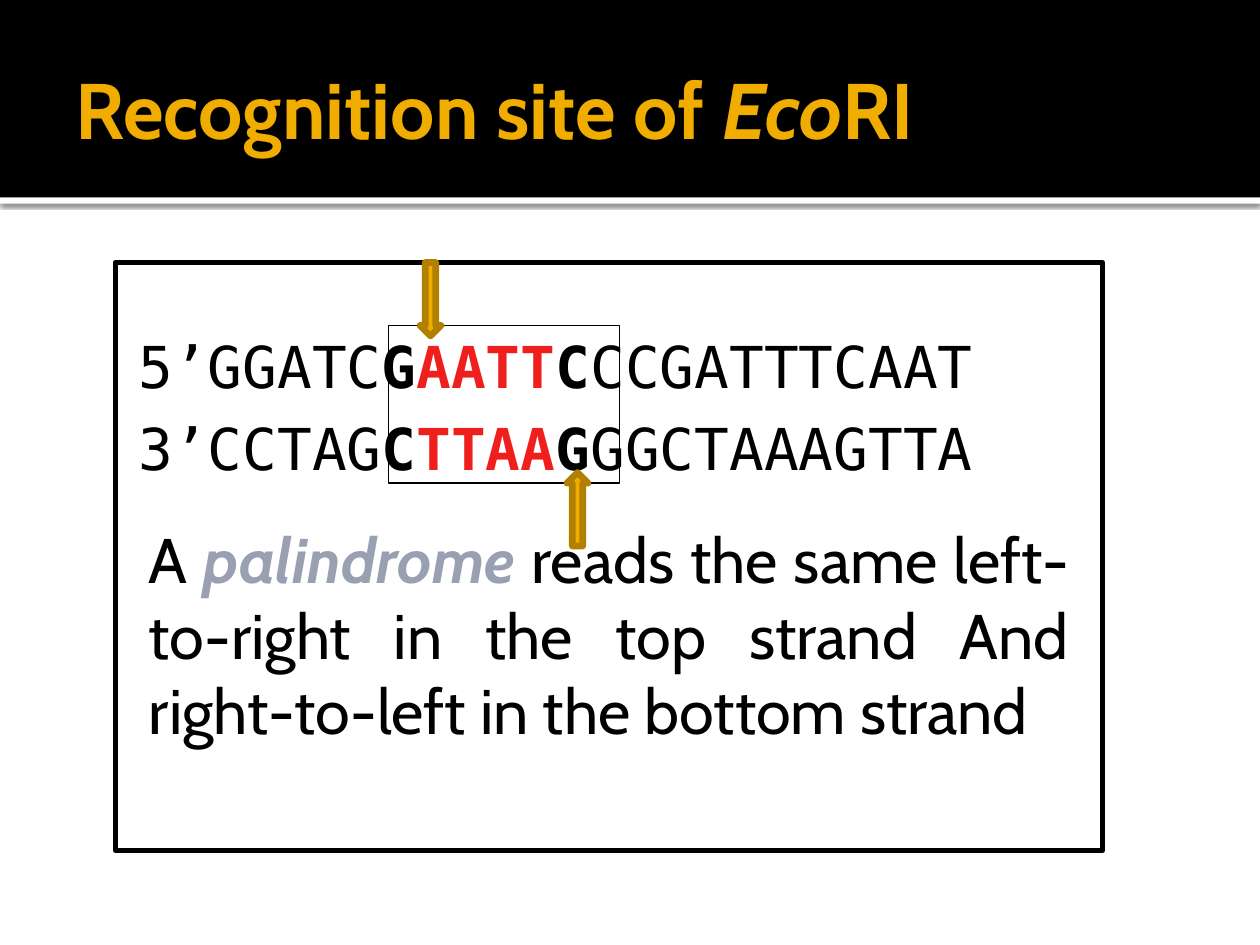
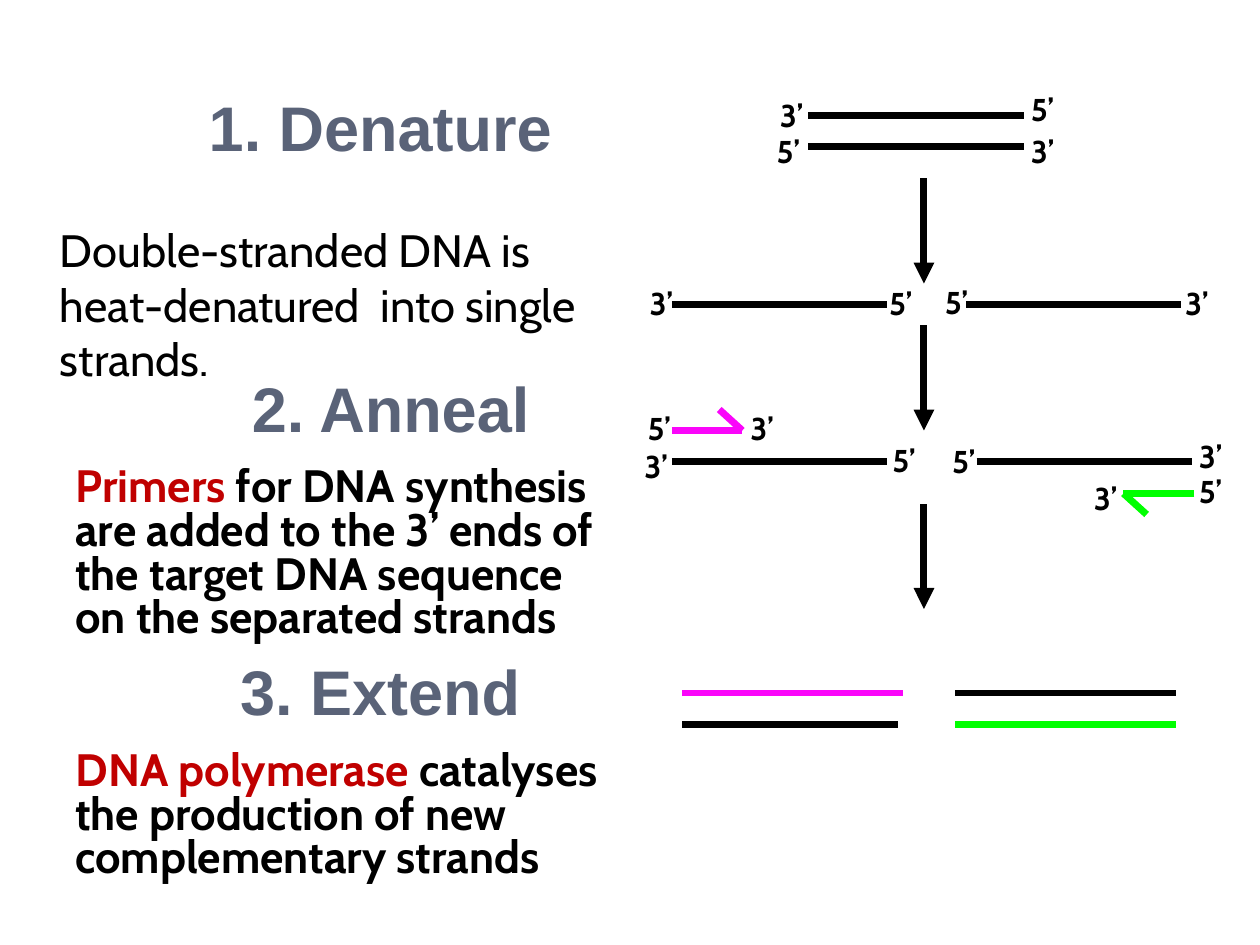
from collections import namedtuple

from lxml import etree
from pptx import Presentation, util as u
from pptx.dml.color import RGBColor
from pptx.enum import shapes, text
from pptx.oxml import ns

# The slide is a grid of 120 columns by 90 rows
COLUMNS, ROWS = 120, 90
CELL = u.Inches(10) // COLUMNS

COLORS = {
    "black": "000000", "white": "FFFFFF", "gold": "F0AD00", "bronze": "B28000",
    "site": "EF1F1D", "term": "98A0B2", "heading": "5A6378", "key": "C00000",
    "magenta": "FA05FA", "green": "00FF00",
}
SANS, MONO, HEADING = "Cabin", "DejaVu Sans Mono", "Arial"
INSETS = (0.1, 0.05, 0.1, 0.05)

Box = namedtuple("Box", "left top width height")


def cells(count):
    return u.Emu(round(count * CELL))


def within(box, left, top, width, height):
    """Turn a place inside a box into a place on the slide."""
    return Box(box.left + left, box.top + top, width, height)


def rgb(color):
    return RGBColor.from_string(COLORS[color])


def add_effects(props, shadow=False):
    effects = etree.SubElement(props, ns.qn("a:effectLst"))
    if shadow:
        outer = etree.SubElement(effects, ns.qn("a:outerShdw"), blurRad=str(u.Pt(2.5)),
                                 dist=str(u.Pt(0.8)), dir="5400000", rotWithShape="0")
        black = etree.SubElement(outer, ns.qn("a:srgbClr"), val=COLORS["black"])
        etree.SubElement(black, ns.qn("a:alpha"), val="60000")


def add_figure(slide, box, fill=None, line=None, weight=1.0, shadow=False,
               kind=shapes.MSO_SHAPE.RECTANGLE):
    figure = slide.shapes.add_shape(kind, *map(cells, box))
    if fill:
        figure.fill.solid()
        figure.fill.fore_color.rgb = rgb(fill)
    else:
        figure.fill.background()
    if line:
        figure.line.color.rgb = rgb(line)
        figure.line.width = u.Pt(weight)
    else:
        figure.line.fill.background()
    if shadow:
        add_effects(figure._element.spPr, shadow=True)
    else:
        figure.shadow.inherit = False
    return figure


def add_words(slide, box, paragraphs, size, font=SANS, insets=INSETS, wrap=True,
              anchor=text.MSO_ANCHOR.TOP, align=text.PP_ALIGN.LEFT, leading=1.0, after=0):
    """Each paragraph is a list of runs: (words, color, style), style from "b" and "i"."""
    frame = slide.shapes.add_textbox(*map(cells, box)).text_frame
    frame.word_wrap = wrap
    frame.vertical_anchor = anchor
    (frame.margin_left, frame.margin_top,
     frame.margin_right, frame.margin_bottom) = map(u.Inches, insets)
    for index, runs in enumerate(paragraphs):
        paragraph = frame.add_paragraph() if index else frame.paragraphs[0]
        paragraph.alignment = align
        paragraph.line_spacing = leading
        paragraph.space_after = u.Pt(after)
        for words, color, style in runs:
            run = paragraph.add_run()
            run.text = words
            run.font.name, run.font.size = font, u.Pt(size)
            run.font.bold, run.font.italic = "b" in style, "i" in style
            run.font.color.rgb = rgb(color)


def add_line(slide, box, start, end, color="black", arrow=False):
    ends = (box.left + start[0], box.top + start[1], box.left + end[0], box.top + end[1])
    line = slide.shapes.add_connector(shapes.MSO_CONNECTOR.STRAIGHT, *map(cells, ends))
    line.line.color.rgb = rgb(color)
    line.line.width = u.Pt(4)
    if arrow:
        etree.SubElement(line.line._get_or_add_ln(), ns.qn("a:tailEnd"), type="triangle")
    add_effects(line._element.spPr)


def title_band(slide, box, title):
    add_figure(slide, within(box, 0, box.height, box.width, 0.6), fill="white", shadow=True)
    add_figure(slide, box, fill="black")
    add_words(slide, within(box, 6, 2, 108, 16.5), [title], 45,
              insets=(0.1, 0.05, 0.05, 0.05), anchor=text.MSO_ANCHOR.MIDDLE)


def recognition_panel(slide, box):
    # Frame
    add_figure(slide, box, line="black", weight=3)

    # Both strands, with the site in bold
    strands = [("5’GGATC", "G", "AATT", "C", "CCGATTTCAAT"),
               ("3’CCTAG", "C", "TTAA", "G", "GGCTAAAGTTA")]
    sequences = [[(before, "black", ""), (first, "black", "b"), (core, "site", "b"),
                  (last, "black", "b"), (after, "black", "")]
                 for before, first, core, last, after in strands]
    add_words(slide, within(box, 1, 6.7, 90, 15), sequences, 33, font=MONO,
              leading=0.9, after=11)
    add_figure(slide, within(box, 26, 6, 22, 15), line="black", weight=0.75)

    # Definition
    definition = [("A ", "black", ""), ("palindrome", "term", "bi"),
                  (" reads the same left-to-right in the top strand And "
                   "right-to-left in the bottom strand", "black", "")]
    add_words(slide, within(box, 2, 24, 90, 23), [definition], 36,
              align=text.PP_ALIGN.JUSTIFY)

    # Cut marks: one from above, one from below
    for left, top, turn in ((29, 0, 0), (43, 20, 180)):
        cut = add_figure(slide, within(box, left, top, 2, 7), fill="gold", line="bronze",
                         weight=3.78, kind=shapes.MSO_SHAPE.DOWN_ARROW)
        cut.rotation = turn


def pcr_step(slide, box, heading, heading_place, runs, body_place, **body_style):
    add_words(slide, within(box, *heading_place, 8.4), [[(heading, "heading", "b")]], 36,
              font=HEADING, wrap=False)
    add_words(slide, within(box, *body_place), [runs], 25.9, **body_style)


def strand_diagram(slide, box):
    # Template strands, then the finished pairs
    template, copied = 20.5, 21
    strands = [(17, 3, template, "black"), (17, 6, template, "black"),
               (4, 21, template, "black"), (32, 21, template, "black"),
               (4, 36, template, "black"), (33, 36, template, "black"),
               (5, 58, copied, "magenta"), (5, 61, template, "black"),
               (31, 58, copied, "black"), (31, 61, copied, "green")]
    for left, top, length, color in strands:
        add_line(slide, box, (left, top), (left + length, top), color)

    # Arrows between stages
    for top in (9, 26.5 - 3.5, 40):
        add_line(slide, box, (28, top), (28, top + 10), arrow=True)

    # Primers as half arrows
    primers = [("magenta", (4, 33), (10.7, 33), (8.5, 31)),
               ("green", (53.75, 39), (47, 39), (49.2, 41))]
    for color, start, tip, barb in primers:
        add_line(slide, box, start, tip, color)
        add_line(slide, box, tip, barb, color)

    # Strand ends, stage by stage
    strand_ends = {
        "5’": [(37, 0), (12.8, 4), (23.5, 18.5), (28.8, 18.4),
               (0.5, 30.4), (23.8, 33.4), (29.5, 33.5), (53, 36.4)],
        "3’": [(13.1, 0.6), (37, 4), (0.7, 18.5), (51.7, 18.5),
               (10.3, 30.4), (0.2, 34), (53, 33), (43, 37)],
    }
    for label, places in strand_ends.items():
        for left, top in places:
            add_words(slide, within(box, left, top, 5, 4.8), [[(label, "black", "b")]], 18)


def recognition_slide(slide):
    title_band(slide, Box(0, 0, COLUMNS, 18.8),
               [("Recognition site of ", "gold", "b"), ("Eco", "gold", "bi"),
                ("RI", "gold", "b")])
    recognition_panel(slide, Box(11, 25, 94, 56))


def pcr_slide(slide):
    # Steps on the left
    pcr_step(slide, Box(5, 7.8, 55, 28), "1. Denature", (13.7, 0, 35.4),
             [("Double-stranded DNA is heat-denatured  into single strands.", "black", "")],
             (0, 12.2, 55, 16), insets=(0.06, 0.1, 0.1, 0.05))
    pcr_step(slide, Box(6, 34.6, 54, 28), "2. Anneal", (16.8, 0, 29.2),
             [("Primers", "key", "b"),
              (" for DNA synthesis are added to the 3’ ends of the target DNA sequence "
               "on the separated strands", "black", "b")],
             (0, 9.4, 54, 19), leading=0.8)
    pcr_step(slide, Box(6, 61.6, 56, 24), "3. Extend", (15.7, 0, 29.3),
             [("DNA polymerase", "key", "b"),
              (" catalyses the production of new complementary strands", "black", "b")],
             (0, 9.4, 56, 14), leading=0.8)

    # Strands on the right
    strand_diagram(slide, Box(60, 8, 60, 62))


def main():
    deck = Presentation()
    deck.slide_width, deck.slide_height = cells(COLUMNS), cells(ROWS)
    blank = deck.slide_layouts[6]
    for build in (recognition_slide, pcr_slide):
        build(deck.slides.add_slide(blank))
    deck.save("out.pptx")


if __name__ == "__main__":
    main()
